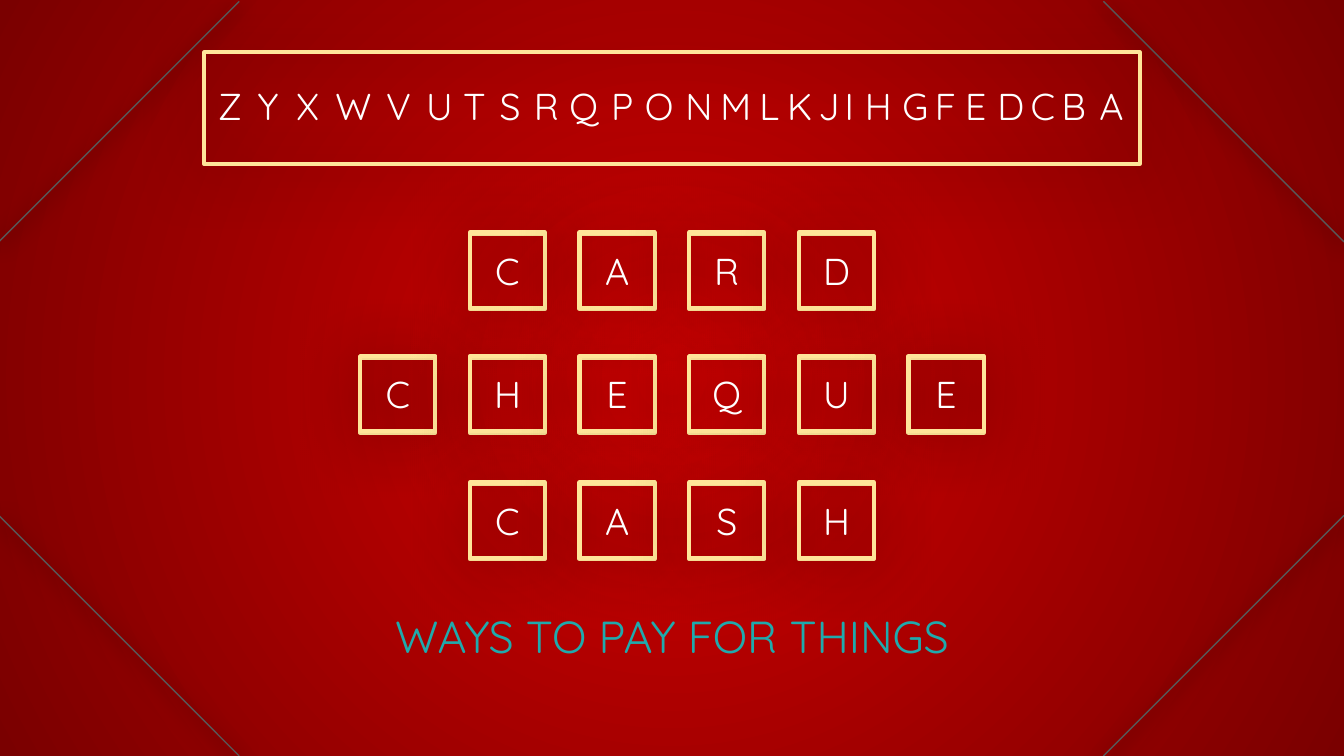
from lxml import etree
from pptx import Presentation
from pptx import util as u
from pptx.dml import color
from pptx.enum import shapes, text
from pptx.oxml import ns

W = 10
H = W * 9 / 16
CORNER = 1.79
FONT = "Quicksand"
GOLD, WHITE, TEAL, GREY = "FFE599", "FFFFFF", "1FAAAD", "585858"
TILE, PITCH, FIRST_COLUMN = 0.56, 0.816, 2.68
BACK_OFFSET = 0.01
WORDS = [("CARD", 1, 1.73), ("CHEQUE", 0, 2.65), ("CASH", 1, 3.59)]
ALPHABET = "ZYXWVUTSRQPONMLKJIHGFEDCBA"
LETTER_LEFTS = [1.62, 1.9, 2.2, 2.47, 2.86, 3.16, 3.44, 3.7, 3.96, 4.23, 4.53, 4.79, 5.09,
                5.35, 5.64, 5.85, 6.09, 6.25, 6.42, 6.7, 6.95, 7.17, 7.41, 7.66, 7.89, 8.16]
LETTER_WIDTHS = [0.18, 0.19, 0.18, 0.32, 0.21, 0.22, 0.18, 0.19, 0.21, 0.23, 0.2, 0.23, 0.22,
                 0.25, 0.17, 0.2, 0.14, 0.14, 0.23, 0.22, 0.17, 0.18, 0.22, 0.2, 0.2, 0.22]


def rgb(value):
    return color.RGBColor.from_string(value)


def inches(*lengths):
    return [u.Inches(length) for length in lengths]


def add_child(parent, tag, **attributes):
    child = etree.SubElement(parent, ns.qn(tag))
    for name, value in attributes.items():
        child.set(name, str(value))
    return child


def set_shadow(sp, opacity, blur, distance):
    effects = add_child(sp._element.spPr, "a:effectLst")
    shadow = add_child(effects, "a:outerShdw", blurRad=u.Pt(blur), dist=u.Pt(distance),
                       dir=90 * 60000, algn="bl", rotWithShape=0)
    black = add_child(shadow, "a:srgbClr", val="000000")
    add_child(black, "a:alpha", val=opacity * 1000)


def set_background(s):
    fill = s.background.fill
    fill.gradient()
    for stop, value in zip(fill.gradient_stops, ["D20000", "7A0000"]):
        stop.color.rgb = rgb(value)
    gradient = s._element.find(".//" + ns.qn("a:gradFill"))
    gradient.remove(gradient.find(ns.qn("a:lin")))
    circle = add_child(gradient, "a:path", path="circle")
    add_child(circle, "a:fillToRect", l=50000, t=50000, r=50000, b=50000)


def add_corner_line(s, x1, y1, x2, y2):
    line = s.shapes.add_connector(shapes.MSO_CONNECTOR.STRAIGHT, *inches(x1, y1, x2, y2))
    line.line.color.rgb = rgb(GREY)
    line.line.width = u.Pt(0.75)
    set_shadow(line, 94, 10, 2.2)


def write(sp, content, size, value, inset=0):
    tf = sp.text_frame
    tf.margin_left = tf.margin_right = tf.margin_top = tf.margin_bottom = u.Inches(inset)
    p = tf.paragraphs[0]
    p.alignment = text.PP_ALIGN.CENTER
    r = p.add_run()
    r.text = content
    r.font.size = u.Pt(size)
    r.font.name = FONT
    r.font.color.rgb = rgb(value)
    return tf


def add_frame(s, x, y, w, h):
    sp = s.shapes.add_shape(shapes.MSO_SHAPE.RECTANGLE, *inches(x, y, w, h))
    sp.fill.background()
    sp.line.color.rgb = rgb(GOLD)
    sp.line.width = u.Pt(2.25)
    set_shadow(sp, 50, 32, 1.5)
    return sp


def add_title(s, content):
    sp = s.shapes.title
    sp.left, sp.top, sp.width, sp.height = inches(1.52, 4.41, 6.96, 0.64)
    tf = write(sp, content, 24, TEAL, 0.1)
    tf.vertical_anchor = text.MSO_ANCHOR.MIDDLE
    tf.auto_size = text.MSO_AUTO_SIZE.SHAPE_TO_FIT_TEXT


def add_letter(s, letter, x, w):
    sp = s.shapes.add_textbox(*inches(x, 0.62, w, 0.38))
    tf = write(sp, letter, 20, WHITE)
    tf.word_wrap = False
    tf.auto_size = text.MSO_AUTO_SIZE.SHAPE_TO_FIT_TEXT


def add_word(s, word, column, y):
    for i, letter in enumerate(word, column):
        x = FIRST_COLUMN + i * PITCH
        add_frame(s, x, y + BACK_OFFSET, TILE, TILE)
        tile = add_frame(s, x, y, TILE, TILE)
        tf = write(tile, letter, 20, WHITE)
        tf.vertical_anchor = text.MSO_ANCHOR.MIDDLE


def main():
    prs = Presentation()
    prs.slide_width, prs.slide_height = inches(W, H)
    s = prs.slides.add_slide(prs.slide_layouts[5])
    set_background(s)
    for x, inward_x in [(-0.01, CORNER), (W, -CORNER)]:
        for y, inward_y in [(0.01, CORNER), (H, -CORNER)]:
            add_corner_line(s, x, y + inward_y, x + inward_x, y)
    add_frame(s, 1.52, 0.39, 6.96, 0.83)
    add_title(s, "WAYS TO PAY FOR THINGS")
    for letter, x, w in zip(ALPHABET, LETTER_LEFTS, LETTER_WIDTHS):
        add_letter(s, letter, x, w)
    for word, column, y in WORDS:
        add_word(s, word, column, y)
    prs.save("out.pptx")


if __name__ == "__main__":
    main()
